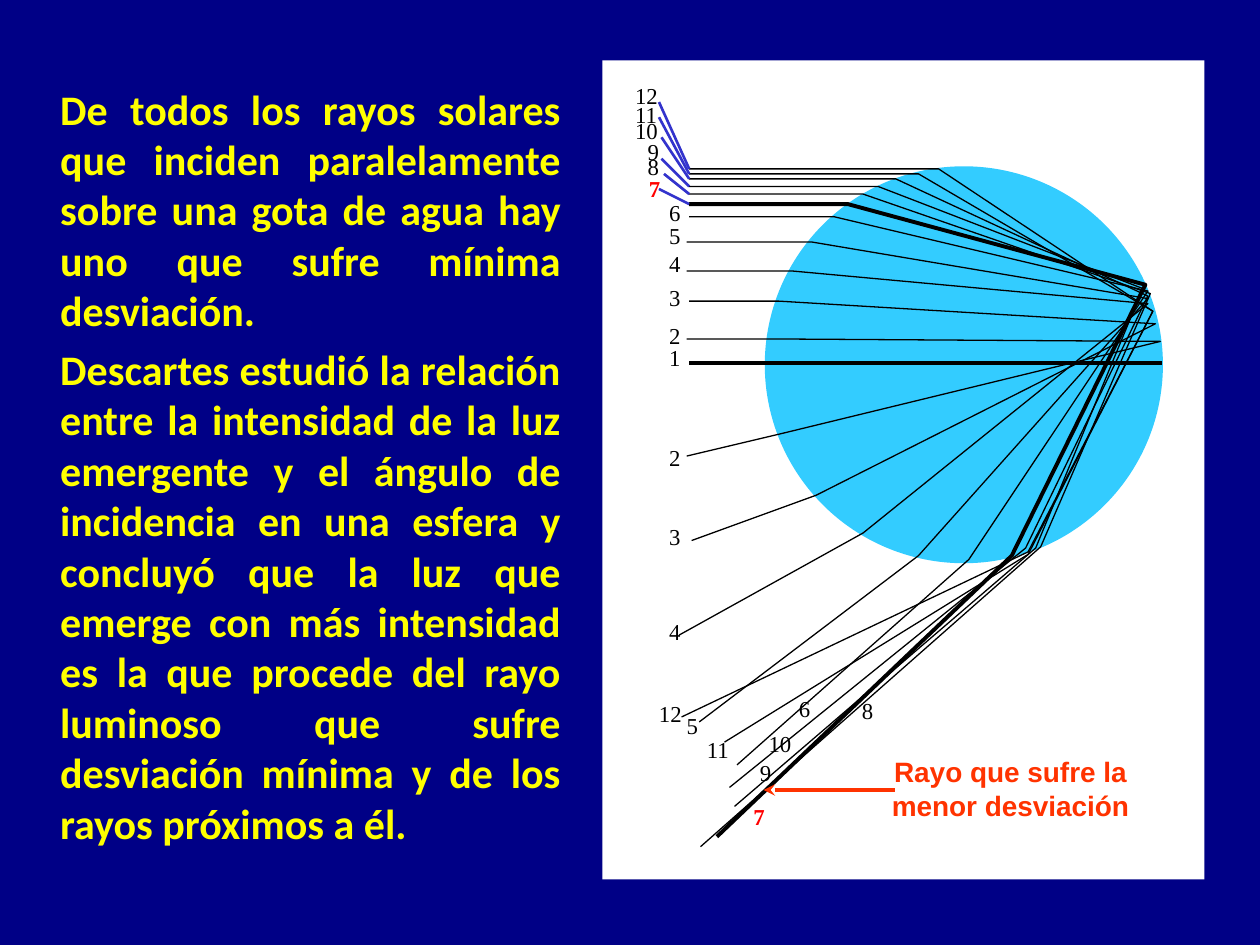
import pptx
import pptx.dml.color
import pptx.enum.shapes
import pptx.enum.text
import pptx.oxml
import pptx.oxml.ns
import pptx.util
import lxml.etree

Inches = pptx.util.Inches
Pt = pptx.util.Pt
Align = pptx.enum.text.PP_ALIGN
Shape = pptx.enum.shapes.MSO_SHAPE

BLACK, RED, ORANGE, POINTER_BLUE = "000000", "FF0000", "FF3300", "3333CC"
RAY_LEFT = 5.47

PARAGRAPHS = [
    "De todos los rayos solares que inciden paralelamente sobre una gota de agua "
    "hay uno que sufre mínima desviación.",
    "Descartes estudió la relación entre la intensidad de la luz emergente y el "
    "ángulo de incidencia en una esfera y concluyó que la luz que emerge con más "
    "intensidad es la que procede del rayo luminoso que sufre desviación mínima y "
    "de los rayos próximos a él.",
]

RAYS = {
    2: [(5.45, 2.69), (6.1, 2.69), (9.21, 2.71), (6.21, 3.44), (5.45, 3.62)],
    3: [(5.47, 2.39), (6.18, 2.39), (9.17, 2.57), (6.48, 3.93), (5.49, 4.29)],
    4: [(5.45, 2.15), (6.28, 2.15), (9.11, 2.41), (6.85, 4.23), (5.39, 5.04)],
    5: [(5.45, 1.92), (6.44, 1.92), (9.11, 2.37), (7.29, 4.41), (5.55, 5.73)],
    6: [(5.47, 1.72), (6.62, 1.72), (9.11, 2.31), (7.69, 4.44), (5.85, 6.07)],
    8: [(5.47, 1.54), (6.85, 1.54), (9.13, 2.33), (8.26, 4.34), (5.56, 6.72)],
    9: [(5.47, 1.48), (6.97, 1.48), (9.07, 2.29), (8.22, 4.35), (5.83, 6.4)],
    10: [(5.47, 1.42), (7.11, 1.42), (9.11, 2.35), (8.14, 4.35), (5.79, 6.25)],
    11: [(5.47, 1.38), (7.29, 1.38), (9.15, 2.47), (8.16, 4.4), (5.75, 5.89)],
    12: [(5.47, 1.34), (7.45, 1.34), (9.15, 2.47), (8.16, 4.38), (5.41, 5.69)],
    7: [(5.47, 1.62), (6.73, 1.62), (9.09, 2.26), (8.03, 4.41), (5.69, 6.64)],
}

LABELS = {
    1: [(5.31, 2.73)],
    2: [(5.31, 2.55), (5.31, 3.52)],
    3: [(5.31, 2.25), (5.31, 4.15)],
    4: [(5.31, 1.98), (5.31, 4.9)],
    5: [(5.31, 1.76), (5.45, 5.65)],
    6: [(5.31, 1.58), (6.34, 5.51)],
    7: [(5.15, 1.39), (5.98, 6.37)],
    8: [(5.14, 1.21), (6.84, 5.53)],
    9: [(5.14, 1.09), (6.03, 6.02)],
    10: [(5.04, 0.93), (6.1, 5.79)],
    11: [(5.04, 0.8), (5.61, 5.84)],
    12: [(5.04, 0.65), (5.23, 5.55)],
}

POINTERS = {
    7: (5.23, 1.5),
    8: (5.27, 1.38),
    9: (5.25, 1.26),
    10: (5.25, 1.09),
    11: (5.23, 0.93),
    12: (5.23, 0.81),
}


def color(value):
    return pptx.dml.color.RGBColor.from_string(value)


class RainbowSlide:
    def __init__(self, presentation, background):
        self.slide = presentation.slides.add_slide(presentation.slide_layouts[6])
        self.shapes = self.slide.shapes
        self.slide.background.fill.solid()
        self.slide.background.fill.fore_color.rgb = color(background)

    def area(self, kind, box, fill):
        shape = self.shapes.add_shape(kind, *map(Inches, box))
        shape.shadow.inherit = False
        shape.fill.solid()
        shape.fill.fore_color.rgb = color(fill)
        shape.line.fill.background()

    def text(self, box, paragraphs, font, size, fill, bold=False,
             align=Align.LEFT, before=0, wrap=True, inset=True):
        frame = self.shapes.add_textbox(*map(Inches, box)).text_frame
        frame.word_wrap = wrap
        if not inset:
            frame.margin_left = frame.margin_right = 0
            frame.margin_top = frame.margin_bottom = 0
        frame.text = "\n".join(paragraphs)
        for paragraph in frame.paragraphs:
            paragraph.alignment = align
            paragraph.space_before = Pt(before)
            paragraph.font.name = font
            paragraph.font.size = Pt(size)
            paragraph.font.bold = bold
            paragraph.font.color.rgb = color(fill)

    def label(self, number, left, top):
        text = str(number)
        minimum = number == 7
        self.text((left, top, 0.09 * len(text), 0.22), [text],
                  "Times New Roman", 13, RED if minimum else BLACK,
                  bold=minimum, wrap=False, inset=False)

    def line(self, start, end, fill, width, arrow=False):
        connector = self.shapes.add_connector(
            pptx.enum.shapes.MSO_CONNECTOR.STRAIGHT, *map(Inches, start + end))
        connector.line.color.rgb = color(fill)
        connector.line.width = Pt(width)
        properties = connector.element.spPr
        if arrow:
            lxml.etree.SubElement(connector.line._get_or_add_ln(),
                                  pptx.oxml.ns.qn("a:tailEnd"), type="stealth")
        lxml.etree.SubElement(properties, pptx.oxml.ns.qn("a:effectLst"))

    def ray(self, points, width):
        corners = [(Inches(x), Inches(y)) for x, y in points]
        builder = self.shapes.build_freeform(*corners[0])
        builder.add_line_segments(corners[1:], close=False)
        shape = builder.convert_to_shape()
        shape.shadow.inherit = False
        shape.fill.background()
        shape.line.color.rgb = color(BLACK)
        shape.line.width = Pt(width)


def main():
    presentation = pptx.Presentation()
    presentation.slide_width = Inches(10)
    presentation.slide_height = Inches(7.5)
    page = RainbowSlide(presentation, "000086")

    page.area(Shape.RECTANGLE, (4.78, 0.48, 4.78, 6.5), "FFFFFF")
    page.area(Shape.OVAL, (6.07, 1.32, 3.16, 3.15), "33CCFF")
    page.text((0.38, 0.61, 4.17, 6.25), PARAGRAPHS, "Calibri", 24, "FFFF00",
              bold=True, align=Align.JUSTIFY, before=4.8)

    page.line((RAY_LEFT, 2.88), (9.22, 2.88), BLACK, 0)
    for number, points in RAYS.items():
        page.ray(points, 2.25 if number == 7 else 0)
    for number, start in POINTERS.items():
        page.line(start, RAYS[number][0], POINTER_BLUE, 1.5)
    for number, places in LABELS.items():
        for left, top in places:
            page.label(number, left, top)

    page.text((6.97, 5.94, 2.1, 0.64), ["Rayo que sufre la menor desviación"],
              "Arial", 16, ORANGE, bold=True, align=Align.CENTER, before=8)
    page.line((7.1, 6.27), (6.06, 6.27), ORANGE, 2.25, arrow=True)

    presentation.save("out.pptx")


if __name__ == "__main__":
    main()
